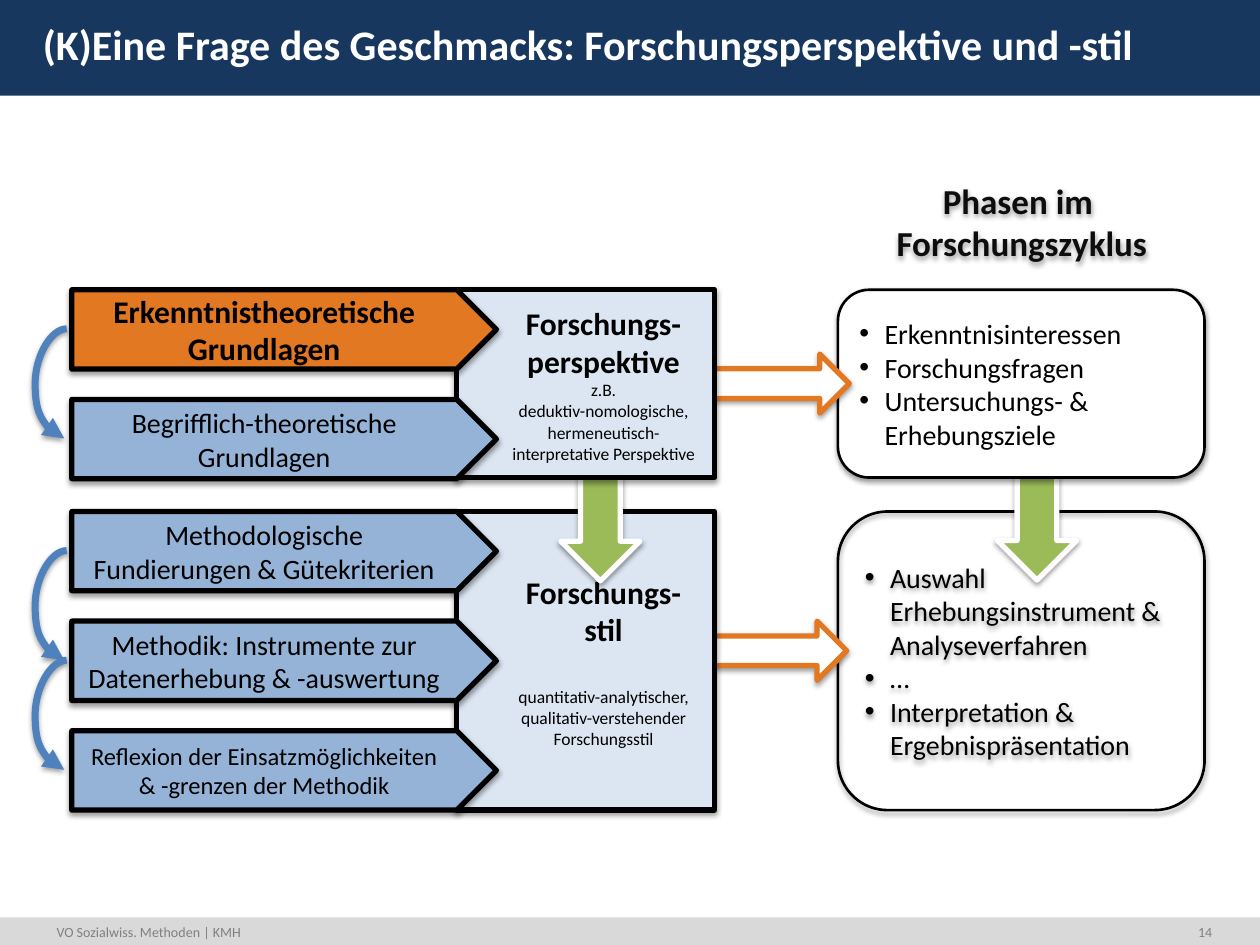
from copy import deepcopy

from lxml import etree
from pptx import Presentation
from pptx import util as u
from pptx.dml.color import RGBColor
from pptx.enum import shapes, text
from pptx.oxml import ns

SHAPE = shapes.MSO_SHAPE
ALIGN = text.PP_ALIGN
BLUE, ORANGE, GREEN, PALE = "95B3D7", "E37823", "9BBB59", "DCE6F2"


def rgb(value):
    return RGBColor.from_string(value)


def sub(parent, tag, **attrs):
    """Append a DrawingML child element."""
    el = etree.SubElement(parent, ns.qn("a:" + tag))
    for key, value in attrs.items():
        el.set(key, str(value))
    return el


def add_shadow(effects):
    shadow = sub(effects, "outerShdw", blurRad=u.Pt(3.1), dist=u.Pt(1.6),
                 dir=90 * 60000, rotWithShape=0)
    sub(sub(shadow, "srgbClr", val="000000"), "alpha", val=38000)


class Deck:
    font = "Calibri"

    def __init__(self, prs):
        self.slide = prs.slides.add_slide(prs.slide_layouts[5])

    def place(self, sp, box):
        for name, value in zip(("left", "top", "width", "height"), box):
            setattr(sp, name, u.Inches(value))

    def add_text(self, p, content, size, color="000000", bold=False):
        """Add text to a paragraph; each newline becomes a line break."""
        for i, line in enumerate(content.split("\n")):
            if i:
                p._p.add_br().append(deepcopy(props))
            r = p.add_run()
            r.text = line
            formats = {"name": self.font, "size": u.Pt(size), "bold": bold}
            for name, value in formats.items():
                setattr(r.font, name, value)
            r.font.color.rgb = rgb(color)
            props = r._r.rPr
            if not line:
                p._p.remove(r._r)

    def title(self, content, box):
        sp = self.slide.shapes.title
        self.place(sp, box)
        tf = sp.text_frame
        tf.vertical_anchor = text.MSO_ANCHOR.MIDDLE
        tf.paragraphs[0].alignment = ALIGN.LEFT
        self.add_text(tf.paragraphs[0], content, 24, "FFFFFF", True)

    def label(self, content, box, size, color, bold=False, align=ALIGN.LEFT,
              anchor=text.MSO_ANCHOR.TOP):
        sp = self.slide.shapes.add_textbox(*map(u.Inches, box))
        tf = sp.text_frame
        tf.word_wrap = True
        tf.vertical_anchor = anchor
        tf.paragraphs[0].alignment = align
        self.add_text(tf.paragraphs[0], content, size, color, bold)
        return sp

    def shape(self, kind, box, fill=None, line=None, width=3, shadow=True):
        sp = self.slide.shapes.add_shape(kind, *map(u.Inches, box))
        sp.shadow.inherit = False
        if shadow:
            add_shadow(sp._element.spPr.find(ns.qn("a:effectLst")))
        if fill:
            sp.fill.solid()
            sp.fill.fore_color.rgb = rgb(fill)
        else:
            sp.fill.background()
        if line:
            sp.line.color.rgb = rgb(line)
            sp.line.width = u.Pt(width)
        else:
            sp.line.fill.background()
        sp.text_frame.vertical_anchor = text.MSO_ANCHOR.MIDDLE
        return sp

    def step(self, top, content, size=16, fill=BLUE, bold=False):
        sp = self.shape(SHAPE.RIGHT_ARROW, (0.57, top, 3.37, 0.63), fill, "000000")
        sp.adjustments[0], sp.adjustments[1] = 1, 0.5
        p = sp.text_frame.paragraphs[0]
        p.alignment = ALIGN.CENTER
        self.add_text(p, content, size, bold=bold)

    def panel(self, top, height, heading, details):
        sp = self.shape(SHAPE.RECTANGLE, (3.62, top, 2.05, height), PALE, "000000")
        p = sp.text_frame.paragraphs[0]
        p.alignment = ALIGN.CENTER
        p._p.get_or_add_pPr().set("marL", str(u.Inches(0.29)))
        self.add_text(p, heading, 18, bold=True)
        self.add_text(p, details, 10)

    def phase(self, top, height, items, fill):
        sp = self.shape(SHAPE.ROUNDED_RECTANGLE, (6.65, top, 2.91, height),
                        fill, "000000", 1.5)
        tf = sp.text_frame
        for i, item in enumerate(items):
            p = tf.add_paragraph() if i else tf.paragraphs[0]
            p.alignment = ALIGN.LEFT
            pPr = p._p.get_or_add_pPr()
            pPr.set("marL", str(u.Inches(0.2)))
            pPr.set("indent", str(u.Inches(-0.2)))
            sub(pPr, "buFont", typeface="Arial")
            sub(pPr, "buChar", char="•")
            self.add_text(p, item, 16)

    def link(self, left, top):
        self.shape(SHAPE.RIGHT_ARROW, (left, top, 1.09, 0.47), "FFFFFF", ORANGE)

    def down_arrow(self, box):
        self.shape(SHAPE.RIGHT_ARROW, box, GREEN, "FFFFFF").rotation = 90

    def curve(self, top, bottom):
        """Draw an arrow that bulges left from one step to the next."""
        c = self.slide.shapes.add_connector(
            shapes.MSO_CONNECTOR.CURVE,
            *map(u.Inches, (0.53, top, 0.51, bottom)))
        c.line.color.rgb = rgb("4F81BD")
        c.line.width = u.Pt(4)
        spPr = c._element.spPr
        sub(spPr.find(ns.qn("a:ln")), "tailEnd", type="triangle")
        add_shadow(sub(spPr, "effectLst"))
        geom = spPr.find(ns.qn("a:prstGeom"))
        guides = geom.find(ns.qn("a:avLst"))
        if guides is None:
            guides = sub(geom, "avLst")
        sub(guides, "gd", name="adj1", fmla="val 1250000")


def main():
    prs = Presentation()
    prs.slide_width, prs.slide_height = u.Inches(10), u.Inches(7.5)
    deck = Deck(prs)

    for box, fill in (((0, 7.28, 10, 0.22), "D9D9D9"), ((0, 0, 10, 0.76), "17375E")):
        bar = deck.shape(SHAPE.RECTANGLE, box, fill, shadow=False)
        deck.slide.shapes._spTree.insert(2, bar._element)
    deck.label("VO Sozialwiss. Methoden | KMH", (0.35, 7.28, 2.99, 0.24), 8, "808080")
    deck.label("14", (9.3, 7.28, 0.42, 0.24), 8, "808080", align=ALIGN.RIGHT)
    deck.title("(K)Eine Frage des Geschmacks: Forschungsperspektive und -stil",
               (0.24, 0.1, 9.44, 0.5))

    upper, lower, pitch = 2.3, 4.06, 0.87

    deck.phase(lower, 2.37, ["Auswahl Erhebungsinstrument & Analyseverfahren", "…",
                             "Interpretation & Ergebnispräsentation"], None)
    deck.link(5.63, 4.93)
    deck.panel(lower, 2.37, "Forschungs-\nstil\n\n",
               "quantitativ-analytischer, qualitativ-verstehender\nForschungsstil")
    deck.step(lower, "Methodologische Fundierungen & Gütekriterien")
    deck.step(lower + pitch, "Methodik: Instrumente zur Datenerhebung & -auswertung")
    deck.step(lower + 2 * pitch,
              "Reflexion der Einsatzmöglichkeiten & -grenzen der Methodik", 14)

    heading = deck.label("Phasen im \nForschungszyklus", (6.65, 1.57, 2.92, 0.37), 20,
                         "0D0D0D", True, ALIGN.CENTER, text.MSO_ANCHOR.MIDDLE)
    heading.shadow.inherit = False
    add_shadow(heading._element.spPr.find(ns.qn("a:effectLst")))
    deck.down_arrow((4.22, 3.75, 1.09, 0.63))
    deck.down_arrow((7.75, 3.81, 0.96, 0.63))

    deck.phase(upper, 1.49, ["Erkenntnisinteressen", "Forschungsfragen",
                             "Untersuchungs- & Erhebungsziele"], "FFFFFF")
    deck.link(5.65, 2.81)
    deck.panel(upper, 1.49, "Forschungs-perspektive\n",
               "z.B.\ndeduktiv-nomologische, hermeneutisch-\ninterpretative Perspektive")
    deck.step(upper, "Erkenntnistheoretische Grundlagen", 18, ORANGE, True)
    deck.step(upper + pitch, "Begrifflich-theoretische Grundlagen")

    for top in (upper, lower, lower + pitch):
        deck.curve(top + 0.31, top + 0.31 + pitch)

    prs.save("out.pptx")


if __name__ == "__main__":
    main()
